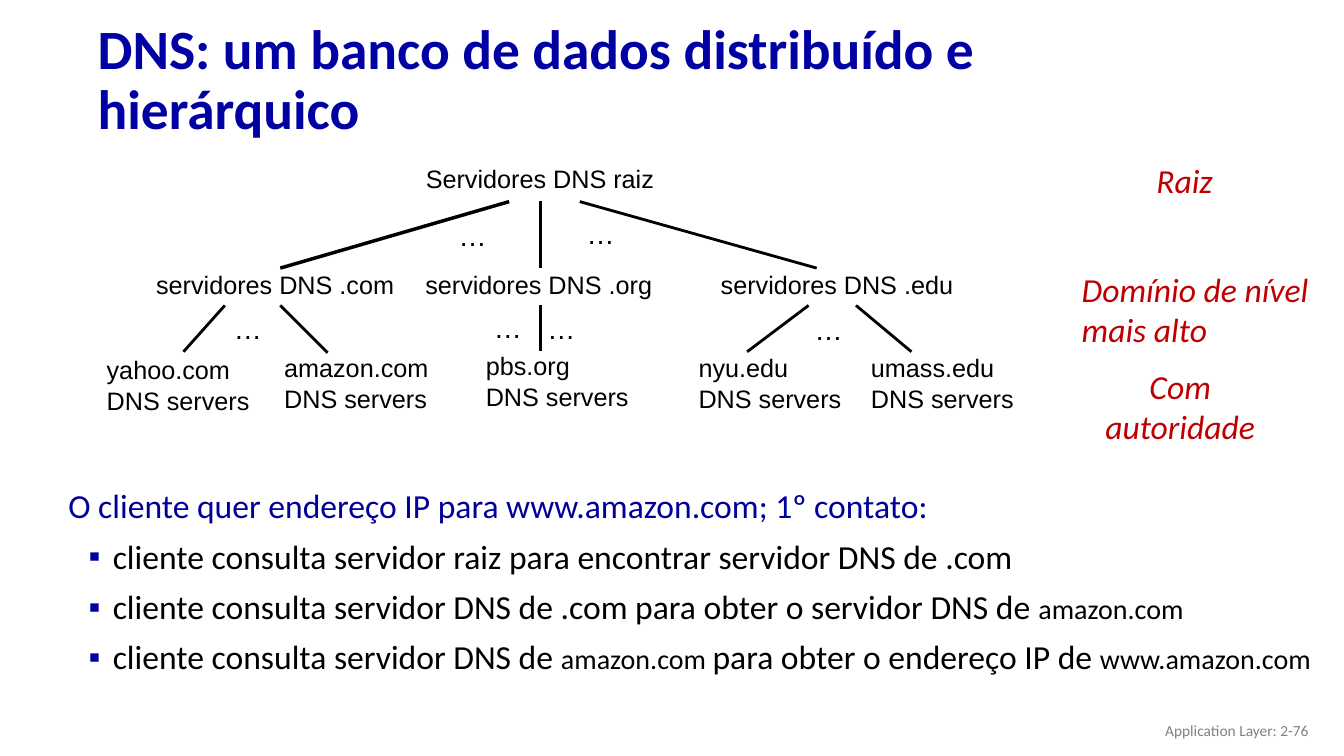
from pptx import Presentation
from pptx.dml.color import RGBColor as RGB
from pptx.enum.shapes import MSO_CONNECTOR as CONN
from pptx.enum.text import MSO_ANCHOR as ANCHOR, MSO_AUTO_SIZE as AUTO, PP_ALIGN as ALIGN
from pptx.oxml.ns import qn
from pptx.util import Inches, Pt
from lxml import etree

THEME = {
    "title": ("Calibri", 39.6, "0000A3"),
    "lead": ("Calibri", 24, "000099"),
    "body": ("Calibri", 24, "000000"),
    "host": ("Calibri", 20, "000000"),
    "server": ("Arial", 18, "000000"),
    "dots": ("Arial", 20, "000000"),
    "level": ("Calibri", 24, "C00000"),
    "footer": ("Calibri", 11, "808080"),
    "bullet": ("Arial", "0000A3"),
    "branch": "000000",
}


def add_run(p, text, style):
    r = p.add_run()
    r.text = text
    name, size, color = THEME[style]
    r.font.name, r.font.size = name, Pt(size)
    r.font.color.rgb = RGB.from_string(color)
    r.font.bold = style == "title"
    r.font.italic = style == "level"


def add_text(x, y, w, h, lines, style, align=ALIGN.LEFT, wrap=False, anchor=ANCHOR.TOP):
    tf = s.shapes.add_textbox(Inches(x), Inches(y), Inches(w), Inches(h)).text_frame
    tf.word_wrap = wrap
    tf.auto_size = AUTO.NONE if wrap else AUTO.SHAPE_TO_FIT_TEXT
    tf.vertical_anchor = anchor
    for i, line in enumerate(lines):
        p = tf.add_paragraph() if i else tf.paragraphs[0]
        p.alignment = align
        add_run(p, line, style)
    return tf


prs = Presentation()
prs.slide_width, prs.slide_height = Inches(13.33), Inches(7.5)
s = prs.slides.add_slide(prs.slide_layouts[6])

title = add_text(0.87, 0.32, 11.5, 0.98, ["DNS: um banco de dados distribuído e hierárquico"],
                 "title", wrap=True, anchor=ANCHOR.MIDDLE)
title.paragraphs[0].line_spacing = 0.9

branches = [
    (5.05, 2, 2.78, 2.66, 2.5), (5.36, 1.99, 5.36, 2.66, 2), (5.75, 2, 8.1, 2.66, 2),
    (2.23, 3.03, 1.82, 3.49, 2), (2.78, 3.03, 3.25, 3.5, 2), (5.36, 3.03, 5.36, 3.48, 2),
    (8.02, 3.03, 7.41, 3.49, 2), (8.49, 3.03, 9.04, 3.49, 2),
]
for x1, y1, x2, y2, width in branches:
    branch = s.shapes.add_connector(CONN.STRAIGHT, Inches(x1), Inches(y1), Inches(x2), Inches(y2))
    branch.line.color.rgb = RGB.from_string(THEME["branch"])
    branch.line.width = Pt(width)
    etree.SubElement(branch._element.spPr, qn("a:effectLst"))

add_text(4.11, 1.57, 2.49, 0.4, ["Servidores DNS raiz"], "server", ALIGN.CENTER)
for x, w, domain in [(1.45, 2.59, ".com"), (4.12, 2.47, ".org"), (7.05, 2.53, ".edu")]:
    add_text(x, 2.62, w, 0.4, [f"servidores DNS {domain}"], "server")

hosts = [(0.96, 3.47, "yahoo.com"), (2.72, 3.45, "amazon.com"), (4.72, 3.43, "pbs.org"),
         (6.83, 3.45, "nyu.edu"), (8.54, 3.45, "umass.edu")]
for x, y, host in hosts:
    add_text(x, y, 1.66, 0.7, [host, "DNS servers"], "server")

for x, y in [(4.45, 2.12), (5.72, 2.1), (2.22, 3.04), (4.8, 3.03), (5.33, 3.04), (7.98, 3.05)]:
    add_text(x, y, 0.48, 0.43, ["…"], "dots")

add_text(11.37, 1.54, 0.77, 0.5, ["Raiz"], "level")
add_text(10.63, 2.62, 2.45, 0.91, ["Domínio de nível mais alto"], "level", wrap=True)
add_text(10.85, 3.58, 1.71, 0.91, ["Com", "autoridade"], "level", ALIGN.CENTER)

tf = add_text(0.52, 4.81, 12.81, 2.33,
              ["O cliente quer endereço IP para www.amazon.com; 1º contato:"], "lead", wrap=True)
lead = tf.paragraphs[0]
lead.line_spacing = 0.9
lead._p.get_or_add_pPr().set("marL", str(Inches(0.06)))

steps = [
    [("cliente consulta servidor raiz para encontrar servidor DNS de .com", "body")],
    [("cliente consulta servidor DNS de .com para obter o servidor DNS de ", "body"),
     ("amazon.com", "host")],
    [("cliente consulta servidor DNS de ", "body"), ("amazon.com ", "host"),
     ("para obter o endereço IP de ", "body"), ("www.amazon.com", "host")],
]
bullet_font, bullet_color = THEME["bullet"]
for step in steps:
    p = tf.add_paragraph()
    p.line_spacing, p.space_before = 0.9, Pt(10)
    pPr = p._p.get_or_add_pPr()
    pPr.set("marL", str(Inches(0.5)))
    pPr.set("indent", str(Inches(-0.24)))
    buClr = etree.SubElement(pPr, qn("a:buClr"))
    etree.SubElement(buClr, qn("a:srgbClr"), val=bullet_color)
    etree.SubElement(pPr, qn("a:buFont"), typeface=bullet_font)
    etree.SubElement(pPr, qn("a:buChar"), char="▪")
    for text, style in step:
        add_run(p, text, style)

add_text(10.08, 7.05, 3, 0.4, ["Application Layer: 2-76"], "footer", ALIGN.RIGHT,
         wrap=True, anchor=ANCHOR.MIDDLE)

prs.save("out.pptx")
